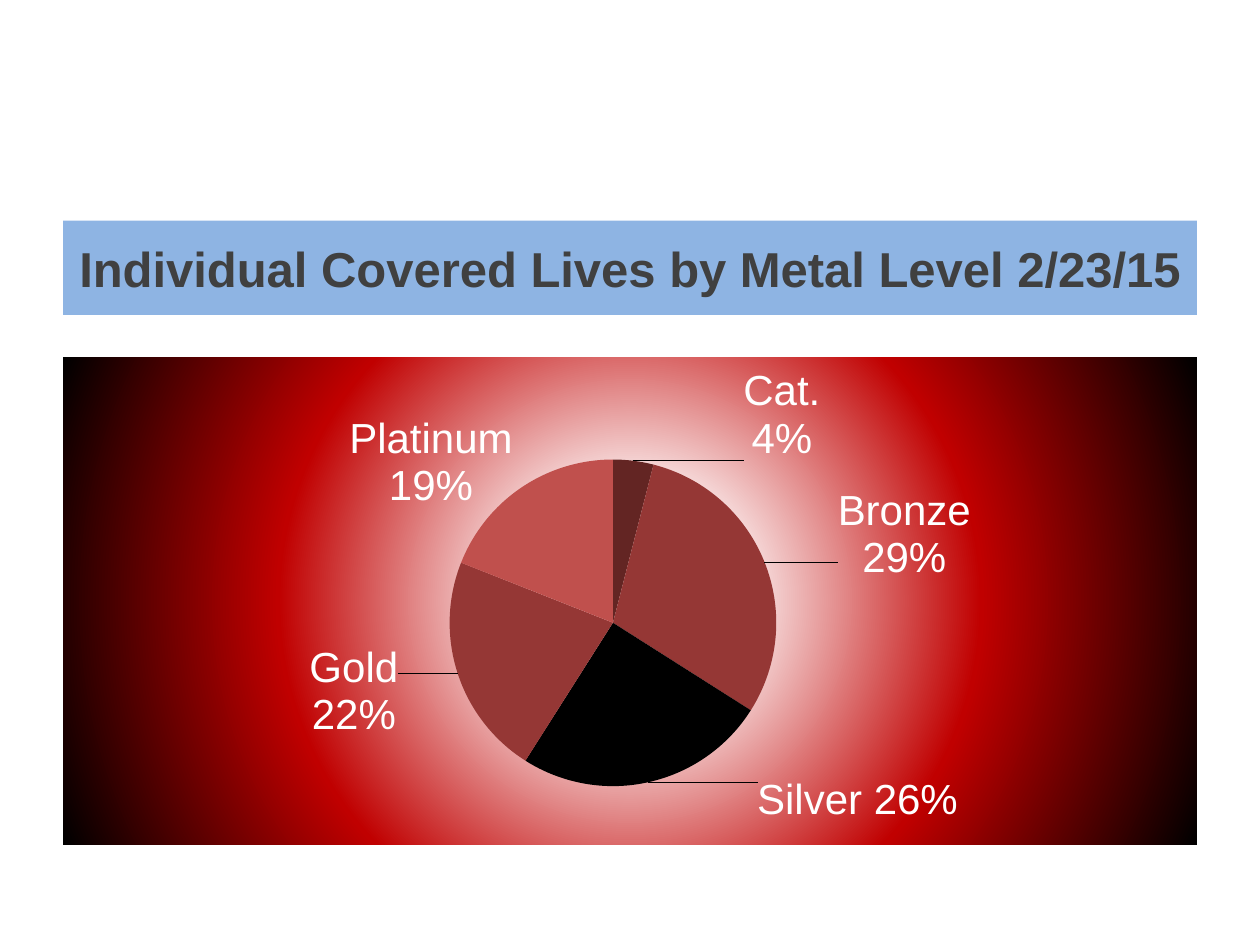
import lxml.etree
import pptx
import pptx.chart.data
import pptx.dml.color
import pptx.enum.chart
import pptx.enum.text
import pptx.oxml
import pptx.oxml.ns
import pptx.util

Cm = pptx.util.Cm
RGBColor = pptx.dml.color.RGBColor
qn = pptx.oxml.ns.qn

BLUE = RGBColor(0x8E, 0xB4, 0xE3)
GREY = RGBColor(0x40, 0x40, 0x40)
WHITE = RGBColor(0xFF, 0xFF, 0xFF)
BLACK = RGBColor(0x00, 0x00, 0x00)
RED = RGBColor(0xC0, 0x00, 0x00)
MAROON = RGBColor(0x63, 0x25, 0x23)
BRICK = RGBColor(0x95, 0x37, 0x35)
ROSE = RGBColor(0xC0, 0x50, 0x4D)
FONT = "Arial"

SLICES = [
    ("CAT", 4, MAROON, "Cat.\n4%", (0.14, -0.26)),
    ("BRZ", 30, BRICK, "Bronze\n29%", (0.19, -0.12)),
    ("SVR", 25, BLACK, "Silver 26%", (0.2, 0.2)),
    ("GLD", 22, BRICK, "Gold\n22%", (-0.16, 0.09)),
    ("PLT", 19, ROSE, "Platinum\n19%", (-0.12, -0.19)),
]
GLOW = [(15, WHITE), (57, RED), (100, BLACK)]


def write_text(tf, text, size=18, color=BLACK, bold=False, wrap=True):
    tf.word_wrap = wrap
    for i, line in enumerate(text.split("\n")):
        p = tf.paragraphs[0] if i == 0 else tf.add_paragraph()
        p.alignment = pptx.enum.text.PP_ALIGN.CENTER
        r = p.add_run()
        r.text = line
        r.font.name = FONT
        r.font.size = pptx.util.Pt(size)
        r.font.bold = bold
        r.font.color.rgb = color


def manual_layout(**values):
    layout = pptx.oxml.parse_xml(
        f'<c:layout {pptx.oxml.ns.nsdecls("c")}><c:manualLayout/></c:layout>')
    for tag, value in values.items():
        lxml.etree.SubElement(layout[0], qn(f"c:{tag}")).set("val", str(value))
    return layout


def radial_fill(stops):
    gs = "".join(f'<a:gs pos="{pos * 1000}"><a:srgbClr val="{color}"/></a:gs>'
                 for pos, color in stops)
    return pptx.oxml.parse_xml(
        f'<c:spPr {pptx.oxml.ns.nsdecls("c", "a")}><a:gradFill><a:gsLst>{gs}</a:gsLst>'
        '<a:path path="circle"><a:fillToRect l="50000" t="50000" r="50000" b="50000"/>'
        '</a:path></a:gradFill><a:ln><a:noFill/></a:ln></c:spPr>')


def add_title(s, left, top, width, height):
    sp = s.shapes.title
    sp.left, sp.top, sp.width, sp.height = left, top, width, height
    sp.fill.solid()
    sp.fill.fore_color.rgb = BLUE
    tf = sp.text_frame
    tf.auto_size = pptx.enum.text.MSO_AUTO_SIZE.NONE
    tf.vertical_anchor = pptx.enum.text.MSO_ANCHOR.MIDDLE
    write_text(tf, "Individual Covered Lives by Metal Level 2/23/15",
               size=28, color=GREY, bold=True)


def add_pie(s, left, top, width, height):
    data = pptx.chart.data.CategoryChartData()
    data.categories = [name for name, *_ in SLICES]
    data.add_series("Series 1", [value for _, value, *_ in SLICES])
    chart = s.shapes.add_chart(pptx.enum.chart.XL_CHART_TYPE.PIE,
                               left, top, width, height, data).chart
    chart.has_title = False
    chart.has_legend = False
    chart.font.name = FONT
    chart.font.size = pptx.util.Pt(10)
    chart.font.color.rgb = BLACK
    chart.plots[0].vary_by_categories = True

    series = chart.plots[0].series[0]
    labels = series.data_labels
    labels.show_category_name = True
    labels.show_percentage = True
    labels.show_value = False
    labels.position = pptx.enum.chart.XL_LABEL_POSITION.CENTER
    labels.font.size = pptx.util.Pt(24)
    labels.font.color.rgb = WHITE
    for i, (_, _, color, text, _) in enumerate(SLICES):
        point = series.points[i]
        point.format.fill.solid()
        point.format.fill.fore_color.rgb = color
        point.format.line.fill.background()
        write_text(point.data_label.text_frame, text, size=24, color=WHITE, wrap=False)
        point.data_label.position = pptx.enum.chart.XL_LABEL_POSITION.CENTER

    root = chart.element
    for body in root.xpath(".//c:ser/c:dLbls/c:txPr/a:bodyPr"):
        body.set("wrap", "none")
    for idx, (*_, (x, y)) in zip(root.xpath(".//c:dLbl/c:idx"), SLICES):
        idx.addnext(manual_layout(x=x, y=y))
    for leader in root.xpath(".//c:ser/c:dLbls/c:showLeaderLines"):
        leader.set("val", "1")
    area = root.xpath(".//c:plotArea")[0]
    for old in area.findall(qn("c:layout")):
        area.remove(old)
    area.insert(0, manual_layout(layoutTarget="inner", xMode="edge", yMode="edge",
                                 x=0.14, y=0.21, w=0.69, h=0.67))
    root.find(qn("c:chart")).addnext(radial_fill(GLOW))


def main():
    prs = pptx.Presentation()
    prs.slide_width, prs.slide_height = Cm(25.4), Cm(19.05)
    s = prs.slides.add_slide(prs.slide_layouts[5])
    left, width = Cm(1.27), Cm(22.86)
    add_title(s, left, Cm(4.45), width, Cm(1.9))
    add_pie(s, left, Cm(7.2), width, Cm(9.83))
    prs.save("out.pptx")


if __name__ == "__main__":
    main()
